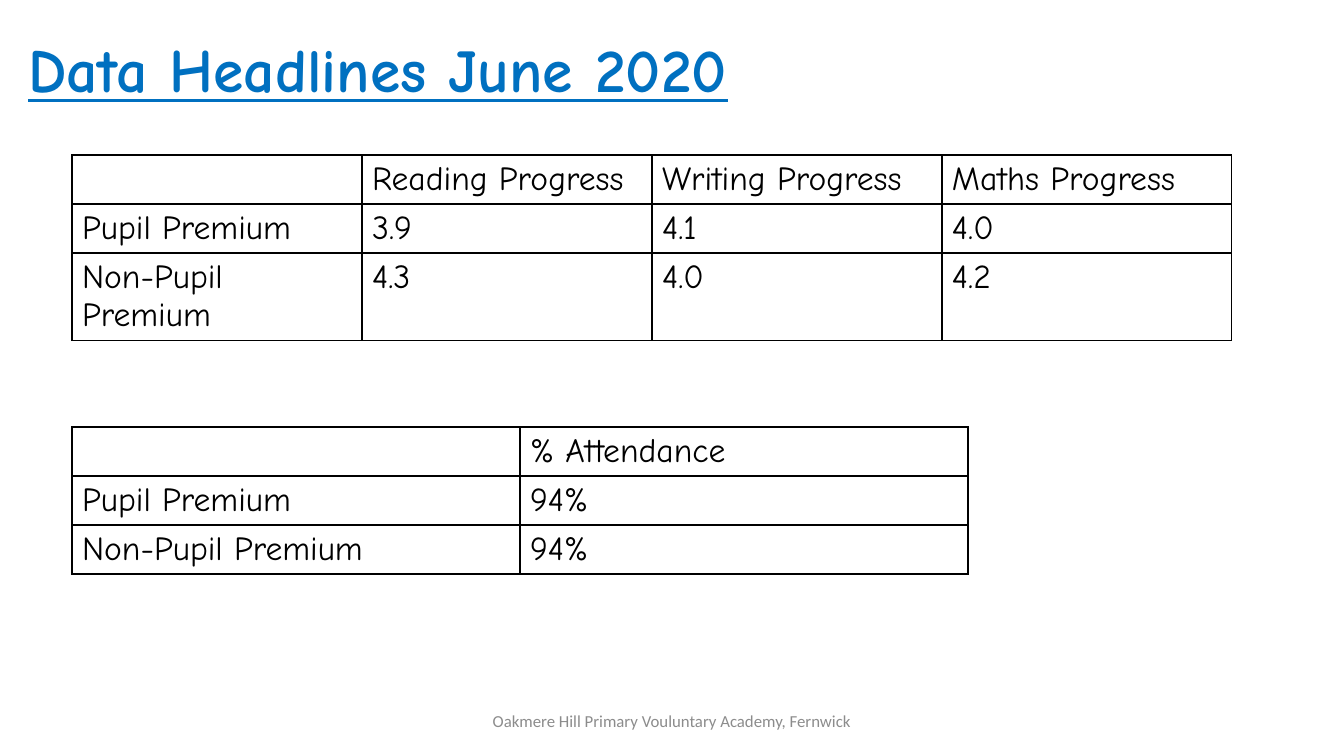
from dataclasses import dataclass

from lxml import etree
from pptx import Presentation, util as u
from pptx.dml.color import RGBColor
from pptx.enum import text
from pptx.oxml.ns import qn

PX_PER_INCH = 100.8


@dataclass(frozen=True)
class Theme:
    display: str = "Comic Neue"
    plain: str = "Calibri"
    blue: str = "0070C0"
    black: str = "000000"
    grey: str = "8C8C8C"
    title: int = 44
    cell: int = 24
    footer: int = 12


T = Theme()

PROGRESS = [
    ["", "Reading Progress", "Writing Progress", "Maths Progress"],
    ["Pupil Premium", "3.9", "4.1", "4.0"],
    ["Non-Pupil Premium", "4.3", "4.0", "4.2"],
]
ATTENDANCE = [
    ["", "% Attendance"],
    ["Pupil Premium", "94%"],
    ["Non-Pupil Premium", "94%"],
]


def px(n):
    return u.Emu(round(n * 914400 / PX_PER_INCH))


def write(tf, words, font=T.display, size=T.cell, color=T.black, bold=False,
          underline=False, align=text.PP_ALIGN.LEFT, spacing=None):
    p = tf.paragraphs[0]
    p.alignment = align
    p.line_spacing = spacing
    r = p.add_run()
    r.text = words
    f = r.font
    f.name, f.size, f.bold, f.underline = font, u.Pt(size), bold, underline
    f.color.rgb = RGBColor.from_string(color)


def add_title(s, words, x, y, w, h):
    sp = s.shapes.title
    sp.left, sp.top, sp.width, sp.height = map(px, (x, y, w, h))
    tf = sp.text_frame
    tf.auto_size = text.MSO_AUTO_SIZE.NONE
    tf.vertical_anchor = text.MSO_ANCHOR.MIDDLE
    write(tf, words, size=T.title, color=T.blue, bold=True, underline=True,
          spacing=0.9)


def add_footer(s, words, x, y, w, h):
    tf = s.shapes.add_textbox(*map(px, (x, y, w, h))).text_frame
    tf.word_wrap = True
    tf.vertical_anchor = text.MSO_ANCHOR.MIDDLE
    write(tf, words, font=T.plain, size=T.footer, color=T.grey,
          align=text.PP_ALIGN.CENTER)


def outline(cell):
    tcPr = cell._tc.get_or_add_tcPr()
    for side in ("lnL", "lnR", "lnT", "lnB"):
        ln = etree.SubElement(tcPr, qn(f"a:{side}"), w=str(u.Pt(1)))
        fill = etree.SubElement(ln, qn("a:solidFill"))
        etree.SubElement(fill, qn("a:srgbClr"), val=T.black)


def add_grid(s, rows, x, y, col_w, row_heights):
    n = len(rows[0])
    size = (x, y, n * col_w, sum(row_heights))
    tbl = s.shapes.add_table(len(rows), n, *map(px, size)).table
    tbl.first_row = tbl.horz_banding = False
    for col in tbl.columns:
        col.width = px(col_w)
    for row, height, values in zip(tbl.rows, row_heights, rows):
        row.height = px(height)
        for cell, value in zip(row.cells, values):
            outline(cell)
            cell.fill.background()
            if value:
                write(cell.text_frame, value)


def main():
    prs = Presentation()
    prs.slide_width, prs.slide_height = px(1344), px(756)
    s = prs.slides.add_slide(prs.slide_layouts[5])

    # Heading
    add_title(s, "Data Headlines June 2020", 18, 0, 1159, 146)

    # Progress and attendance tables
    add_grid(s, PROGRESS, 72, 155, 290, [49, 49, 87])
    add_grid(s, ATTENDANCE, 72, 427, 448, [49, 49, 49])

    # Footer
    add_footer(s, "Oakmere Hill Primary Vouluntary Academy, Fernwick",
               445, 701, 454, 40)

    prs.save("out.pptx")


if __name__ == "__main__":
    main()
